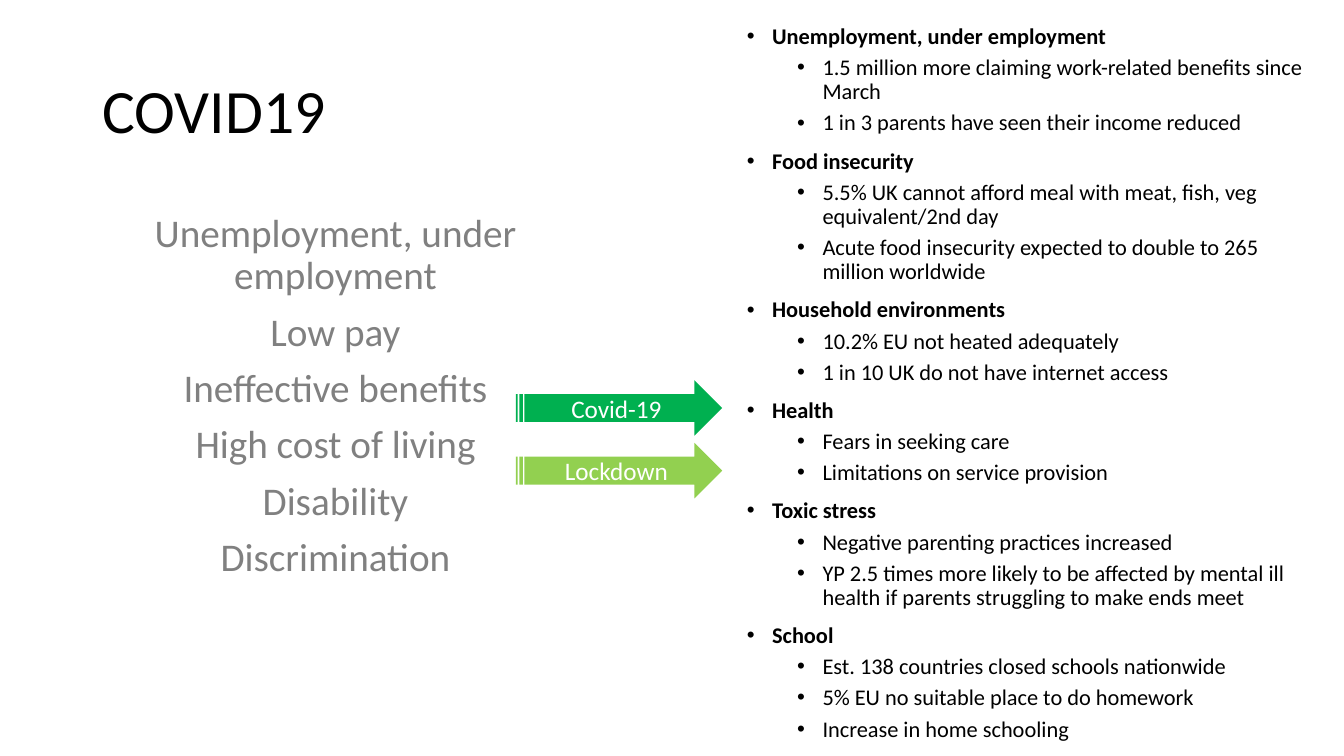
"""Build the slide on the effects of COVID19."""
from lxml.etree import SubElement
from pptx import Presentation
from pptx.dml.color import RGBColor
from pptx.enum.shapes import MSO_SHAPE
from pptx.enum.text import MSO_ANCHOR, PP_ALIGN
from pptx.oxml.ns import qn
from pptx.util import Cm, Pt

CAUSES = [
    "Unemployment, under employment",
    "Low pay",
    "Ineffective benefits",
    "High cost of living",
    "Disability",
    "Discrimination",
]

EFFECTS = {
    "Unemployment, under employment": [
        "1.5 million more claiming work-related benefits since March",
        "1 in 3 parents have seen their income reduced",
    ],
    "Food insecurity": [
        "5.5% UK cannot afford meal with meat, fish, veg equivalent/2nd day",
        "Acute food insecurity expected to double to 265 million worldwide",
    ],
    "Household environments": [
        "10.2% EU not heated adequately",
        "1 in 10 UK do not have internet access",
    ],
    "Health": [
        "Fears in seeking care",
        "Limitations on service provision",
    ],
    "Toxic stress": [
        "Negative parenting practices increased",
        "YP 2.5 times more likely to be affected by mental ill health "
        "if parents struggling to make ends meet",
    ],
    "School": [
        "Est. 138 countries closed schools nationwide",
        "5% EU no suitable place to do homework",
        "Increase in home schooling",
    ],
}

ARROWS = [("Covid-19", "00B050"), ("Lockdown", "92D050")]


def color(code):
    """Turn a hex string into a colour."""
    return RGBColor.from_string(code)


def style(para, size, code, bold=False):
    """Set the font of a whole paragraph."""
    font = para.font
    font.name = "Calibri"
    font.size = Pt(size)
    font.bold = bold
    font.color.rgb = color(code)


def add_box(slide, left, top, width, height):
    """Add an empty wrapping text box and return its frame."""
    box = slide.shapes.add_textbox(Cm(left), Cm(top), Cm(width), Cm(height))
    box.text_frame.word_wrap = True
    return box.text_frame


def add_line(frame, text, space):
    """Add a paragraph, with space before it unless it is the first."""
    para = frame.paragraphs[0]
    if para.runs:
        para = frame.add_paragraph()
        para.space_before = Pt(space)
    para.text = text
    para.line_spacing = 0.9
    return para


def add_bullet(para, level):
    """Give a paragraph a hanging bullet."""
    para.level = level
    props = para._p.get_or_add_pPr()
    props.set("marL", str(Cm(0.64 + 1.27 * level)))
    props.set("indent", str(Cm(-0.64)))
    SubElement(props, qn("a:buFont"), typeface="Arial")
    SubElement(props, qn("a:buChar"), char="•")


def add_title(slide, text):
    """Add the slide title."""
    frame = add_box(slide, 2.33, 1.01, 14.4, 3.68)
    frame.vertical_anchor = MSO_ANCHOR.MIDDLE
    style(add_line(frame, text, 0), 44, "000000")


def add_causes(slide):
    """Add the centred list of causes."""
    frame = add_box(slide, 1.06, 5.26, 14.79, 11.88)
    for cause in CAUSES:
        para = add_line(frame, cause, 10)
        para.alignment = PP_ALIGN.CENTER
        style(para, 28, "808080")


def add_effects(slide):
    """Add the two-level list of effects."""
    frame = add_box(slide, 18.57, 0.51, 14.6, 20.4)
    for head, facts in EFFECTS.items():
        para = add_line(frame, head, 10)
        add_bullet(para, 0)
        style(para, 16, "000000", True)
        for fact in facts:
            para = add_line(frame, fact, 5)
            add_bullet(para, 1)
            style(para, 16, "000000")


def add_arrow(slide, top, text, fill):
    """Add a labelled striped arrow."""
    arrow = slide.shapes.add_shape(
        MSO_SHAPE.STRIPED_RIGHT_ARROW, Cm(13), Cm(top), Cm(5.2), Cm(1.4))
    arrow.shadow.inherit = False
    arrow.fill.solid()
    arrow.fill.fore_color.rgb = color(fill)
    arrow.line.fill.background()
    frame = arrow.text_frame
    frame.vertical_anchor = MSO_ANCHOR.MIDDLE
    para = frame.paragraphs[0]
    para.text = text
    para.alignment = PP_ALIGN.CENTER
    style(para, 18, "FFFFFF")


def main():
    """Build and save the slide."""
    deck = Presentation()
    deck.slide_width, deck.slide_height = Cm(33.87), Cm(19.05)
    slide = deck.slides.add_slide(deck.slide_layouts[6])
    add_effects(slide)
    add_causes(slide)
    for row, (text, fill) in enumerate(ARROWS):
        add_arrow(slide, 9.58 + 1.58 * row, text, fill)
    add_title(slide, "COVID19")
    deck.save("out.pptx")


if __name__ == "__main__":
    main()
